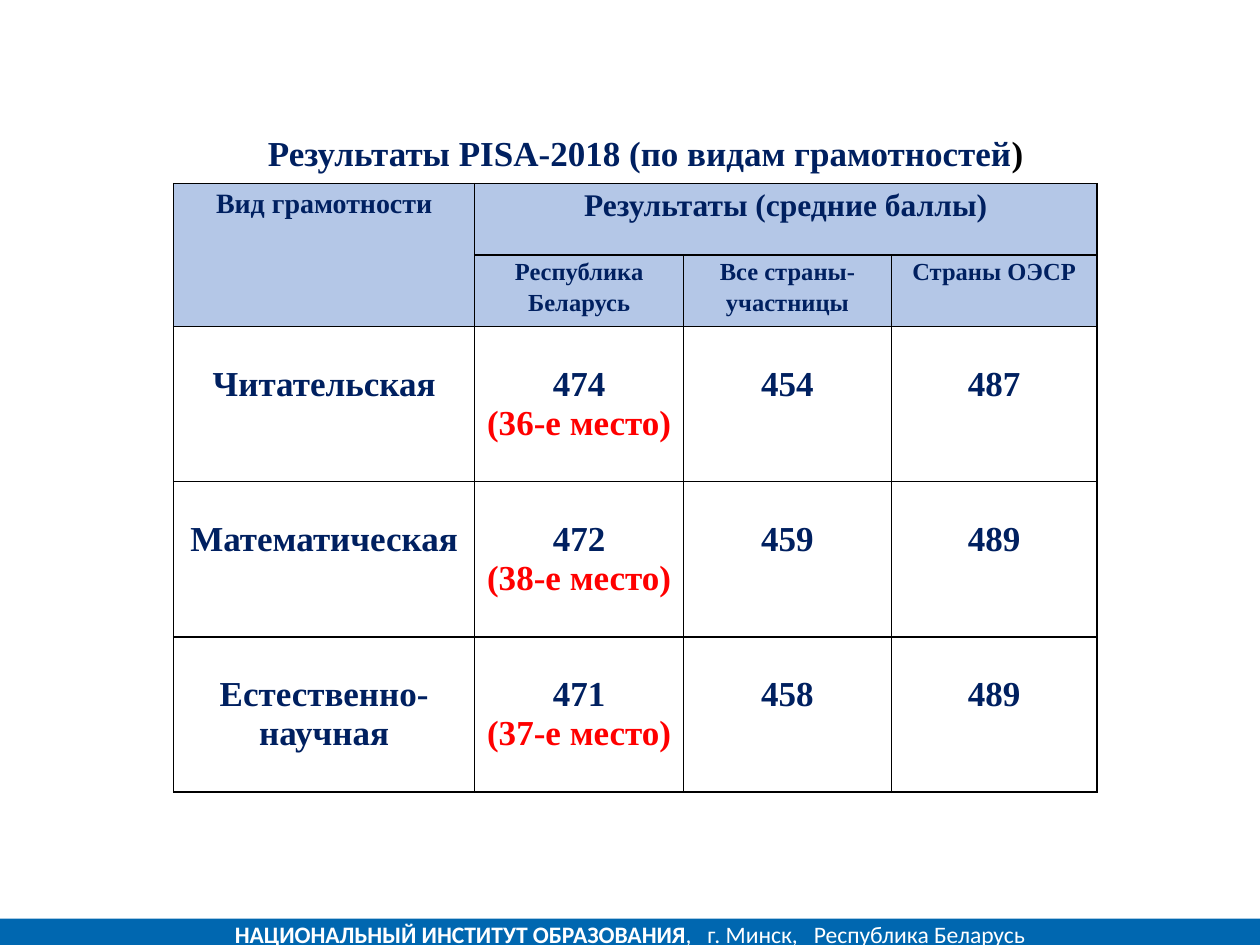
from dataclasses import dataclass

from lxml.etree import SubElement
from pptx import Presentation
from pptx.dml.color import RGBColor
from pptx.enum.shapes import MSO_SHAPE
from pptx.enum.text import MSO_ANCHOR, MSO_AUTO_SIZE, PP_ALIGN
from pptx.oxml.ns import qn
from pptx.slide import Slide
from pptx.table import Table, _Cell
from pptx.text.text import _Paragraph
from pptx.util import Cm, Pt

COLORS = {
    "navy": "002060",
    "red": "FF0000",
    "black": "000000",
    "white": "FFFFFF",
    "header": "B4C7E7",
    "footer": "0067B0",
}
SERIF = "Times New Roman"
SANS = "Calibri"
COLUMN_WIDTHS = (6.07, 4.21, 4.19, 4.14)
ROW_HEIGHTS = (1.44, 1.44, 3.13, 3.13, 3.13)
BODY_TOP_MARGIN = 0.78


@dataclass
class HeaderCell:
    row: int
    column: int
    text: str
    size: float


@dataclass
class Literacy:
    name: str
    belarus: int
    place: int
    all_countries: int
    oecd: int


HEADERS = (
    HeaderCell(0, 0, "Вид грамотности", 16),
    HeaderCell(0, 1, "Результаты (средние баллы)", 18),
    HeaderCell(1, 1, "Республика Беларусь", 14),
    HeaderCell(1, 2, "Все страны-участницы", 14),
    HeaderCell(1, 3, "Страны ОЭСР", 14),
)
RESULTS = (
    Literacy("Читательская", 474, 36, 454, 487),
    Literacy("Математическая", 472, 38, 459, 489),
    Literacy("Естественно-научная", 471, 37, 458, 489),
)


def color(name: str) -> RGBColor:
    return RGBColor.from_string(COLORS[name])


def add_run(paragraph: _Paragraph, text: str, size: float, color_name: str,
            font_name: str = SERIF, bold: bool = True, spacing: float = 0) -> None:
    """Add a formatted run; spacing is extra points after each character."""
    run = paragraph.add_run()
    run.text = text
    run.font.name = font_name
    run.font.size = Pt(size)
    run.font.bold = bold
    run.font.color.rgb = color(color_name)
    if spacing:
        run.font._element.set("spc", str(round(spacing * 100)))


def add_title(slide: Slide) -> None:
    title = slide.shapes.title
    title.left, title.top, title.width, title.height = Cm(3.91), Cm(2.51), Cm(18.21), Cm(1.12)
    frame = title.text_frame
    frame.auto_size = MSO_AUTO_SIZE.NONE
    frame.vertical_anchor = MSO_ANCHOR.MIDDLE
    paragraph = frame.paragraphs[0]
    paragraph.alignment = PP_ALIGN.CENTER
    add_run(paragraph, "Результаты PISA-2018 (по видам грамотностей", 20, "navy")
    add_run(paragraph, ")", 20, "black")


def add_footer(slide: Slide) -> None:
    bar = slide.shapes.add_shape(MSO_SHAPE.RECTANGLE, 0, Cm(18.52), Cm(25.4), Cm(0.61))
    bar.shadow.inherit = False
    bar.fill.solid()
    bar.fill.fore_color.rgb = color("footer")
    bar.line.fill.background()
    frame = bar.text_frame
    frame.word_wrap = True
    frame.vertical_anchor = MSO_ANCHOR.MIDDLE
    paragraph = frame.paragraphs[0]
    paragraph.alignment = PP_ALIGN.CENTER
    add_run(paragraph, "НАЦИОНАЛЬНЫЙ ИНСТИТУТ ОБРАЗОВАНИЯ", 13.5, "white", SANS)
    for place in ("г. Минск", "Республика Беларусь"):
        add_run(paragraph, ",", 13.5, "white", SANS, bold=False)
        add_run(paragraph, " ", 13.5, "white", SANS, bold=False, spacing=6.1)
        add_run(paragraph, place, 13.5, "white", SANS, bold=False)


def set_borders(cell: _Cell) -> None:
    properties = cell._tc.get_or_add_tcPr()
    for index, side in enumerate(("lnL", "lnR", "lnT", "lnB")):
        line = SubElement(properties, qn(f"a:{side}"), w=str(Pt(1)))
        fill = SubElement(line, qn("a:solidFill"))
        SubElement(fill, qn("a:srgbClr"), val=COLORS["black"])
        properties.insert(index, line)


def format_cell(cell: _Cell, is_header: bool) -> None:
    cell.margin_left = cell.margin_right = Cm(0.18)
    cell.margin_top = Cm(0 if is_header else BODY_TOP_MARGIN)
    cell.margin_bottom = 0
    cell.vertical_anchor = MSO_ANCHOR.TOP
    if is_header:
        cell.fill.solid()
        cell.fill.fore_color.rgb = color("header")
    else:
        cell.fill.background()
    set_borders(cell)


def fill_body_row(table: Table, row: int, result: Literacy) -> None:
    values = (result.name, result.belarus, result.all_countries, result.oecd)
    for column, value in enumerate(values):
        paragraph = table.cell(row, column).text_frame.paragraphs[0]
        paragraph.alignment = PP_ALIGN.CENTER
        add_run(paragraph, str(value), 20, "navy")
    paragraph = table.cell(row, 1).text_frame.add_paragraph()
    paragraph.alignment = PP_ALIGN.CENTER
    add_run(paragraph, f"({result.place}-е место)", 20, "red")


def add_results_table(slide: Slide) -> None:
    table = slide.shapes.add_table(
        len(ROW_HEIGHTS), len(COLUMN_WIDTHS), Cm(3.5), Cm(3.7),
        Cm(sum(COLUMN_WIDTHS)), Cm(sum(ROW_HEIGHTS))).table
    table.first_row = table.horz_banding = False
    for column, width in zip(table.columns, COLUMN_WIDTHS):
        column.width = Cm(width)
    for index, (row, height) in enumerate(zip(table.rows, ROW_HEIGHTS)):
        row.height = Cm(height)
        for cell in row.cells:
            format_cell(cell, is_header=index < 2)
    table.cell(0, 0).merge(table.cell(1, 0))
    table.cell(0, 1).merge(table.cell(0, 3))
    for header in HEADERS:
        paragraph = table.cell(header.row, header.column).text_frame.paragraphs[0]
        paragraph.alignment = PP_ALIGN.CENTER
        paragraph.line_spacing = 1.15
        add_run(paragraph, header.text, header.size, "navy")
    for row, result in enumerate(RESULTS, start=2):
        fill_body_row(table, row, result)


def main() -> None:
    presentation = Presentation()
    presentation.slide_width, presentation.slide_height = Cm(25.4), Cm(19.05)
    slide = presentation.slides.add_slide(presentation.slide_layouts[5])
    add_footer(slide)
    add_results_table(slide)
    add_title(slide)
    presentation.save("out.pptx")


if __name__ == "__main__":
    main()
